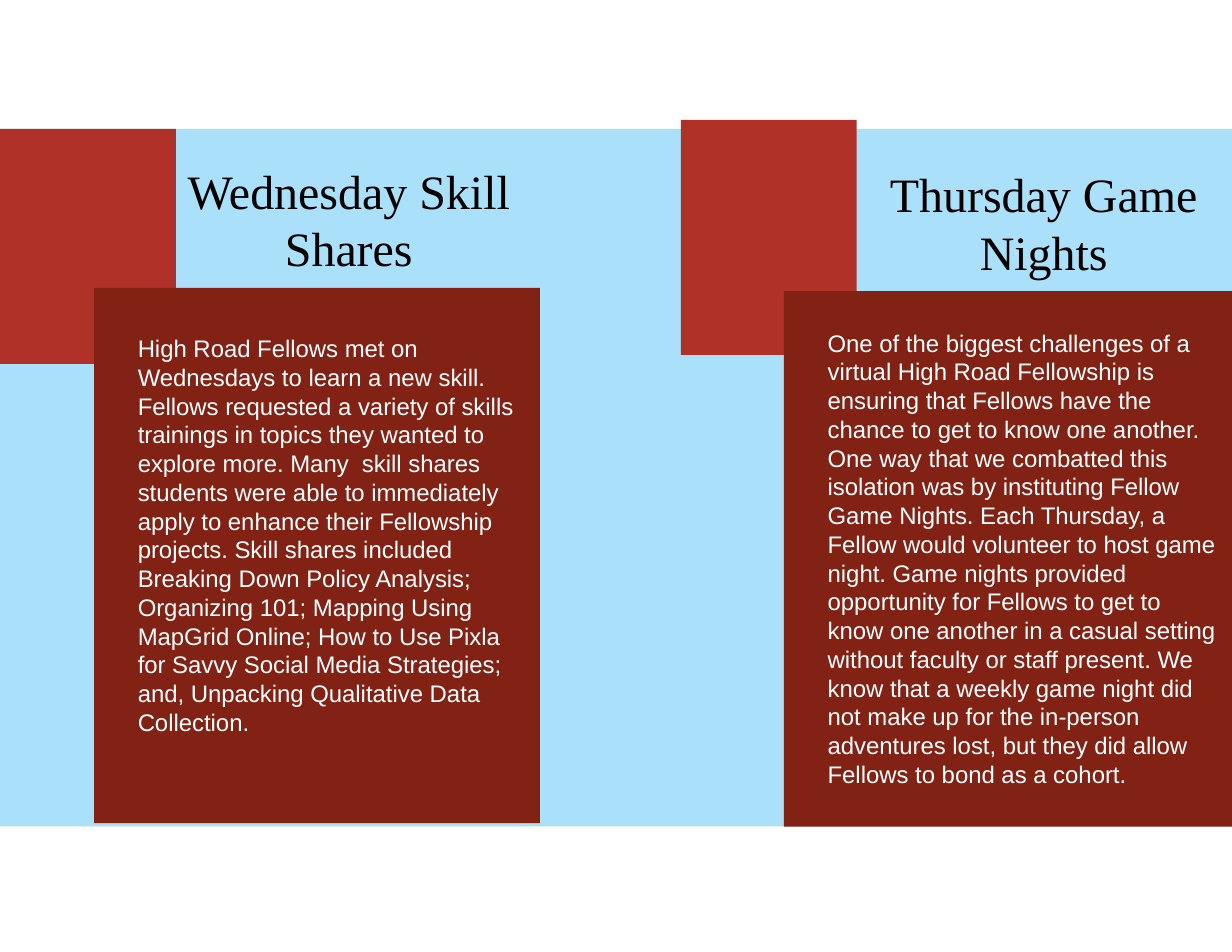
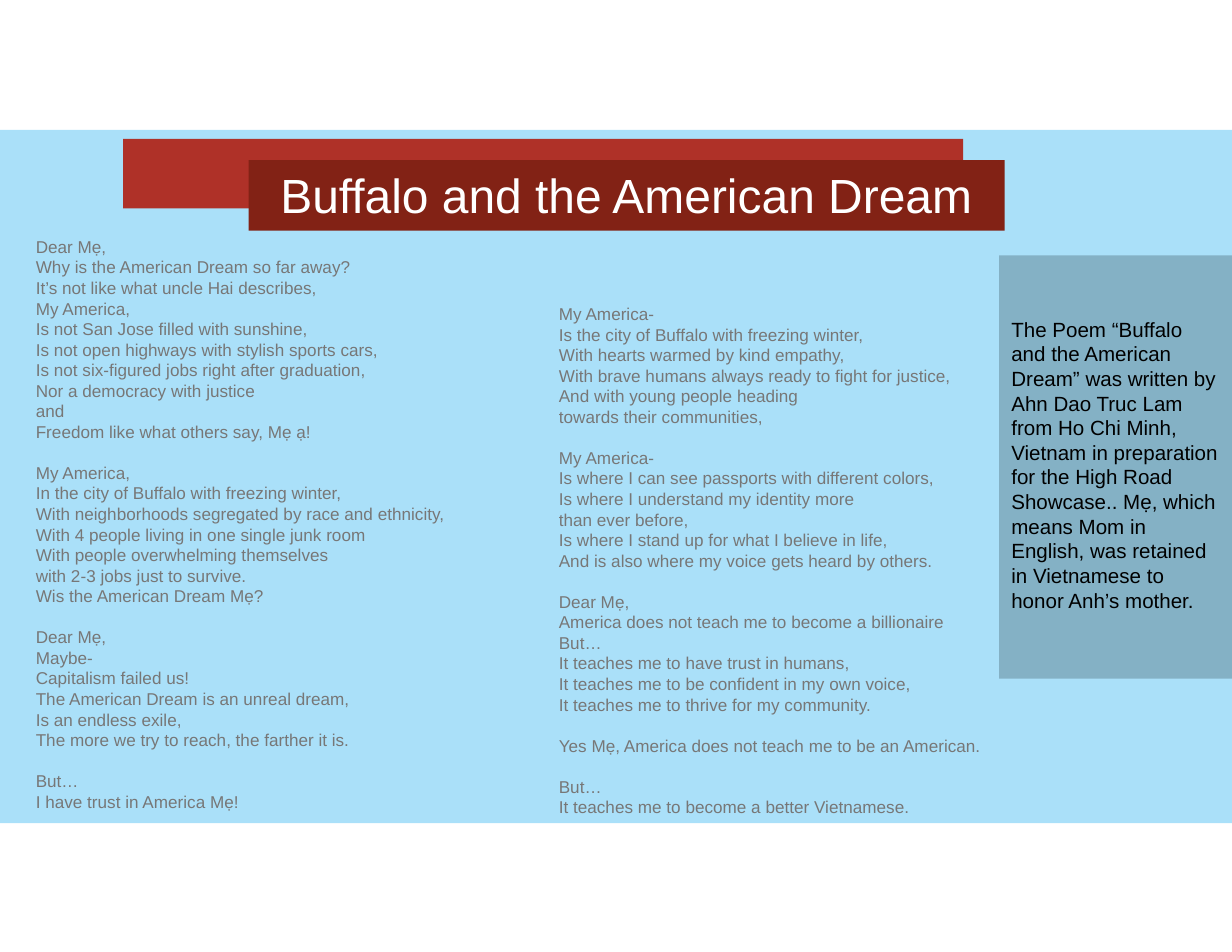
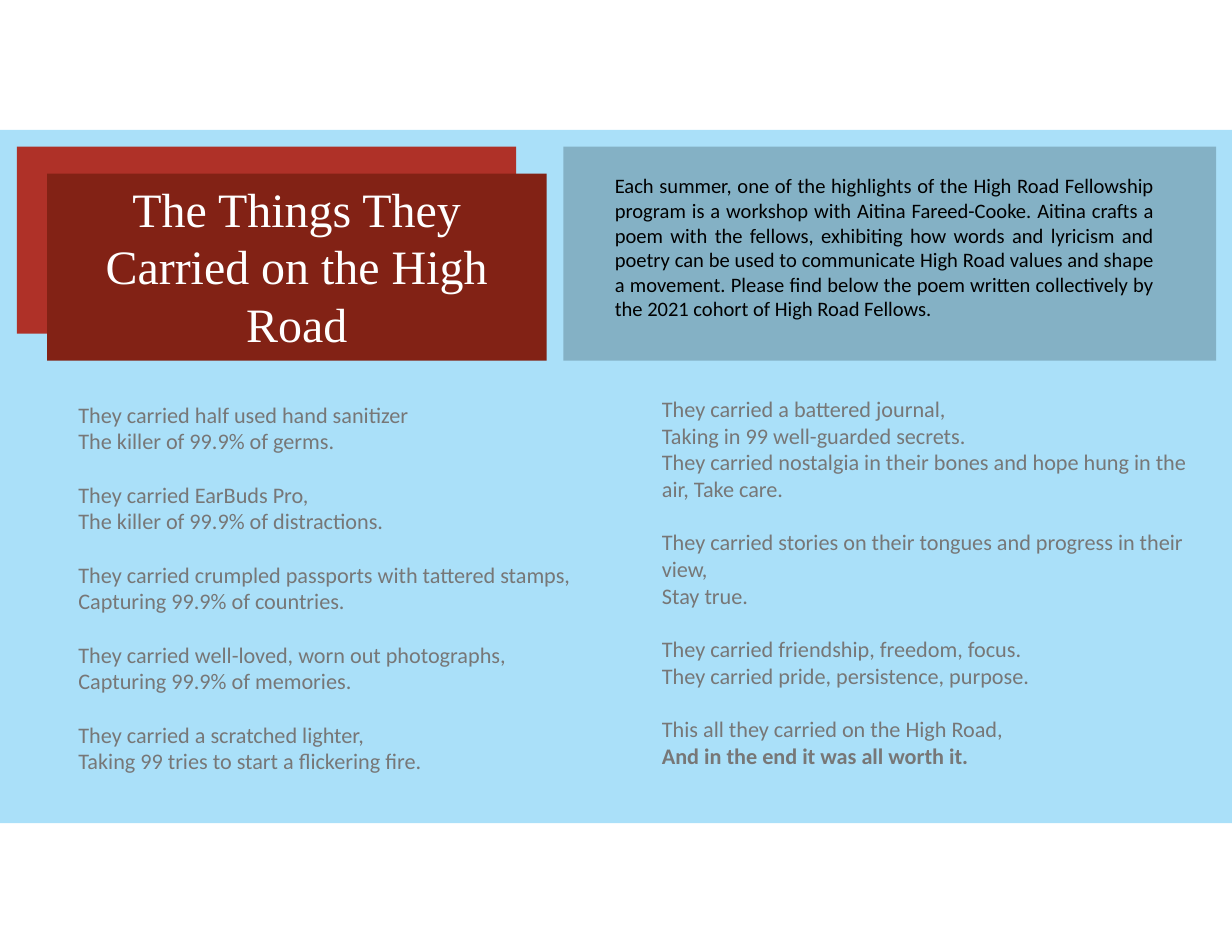
from dataclasses import dataclass, replace

from lxml import etree
from pptx import Presentation
from pptx.dml.color import RGBColor
from pptx.enum.shapes import MSO_SHAPE
from pptx.enum.text import MSO_ANCHOR, MSO_AUTO_SIZE, PP_ALIGN
from pptx.oxml.ns import qn
from pptx.util import Inches, Pt

RECT = MSO_SHAPE.RECTANGLE
LEFT, CENTER, JUSTIFY = PP_ALIGN.LEFT, PP_ALIGN.CENTER, PP_ALIGN.JUSTIFY
TOP, MIDDLE = MSO_ANCHOR.TOP, MSO_ANCHOR.MIDDLE
NO_FIT = MSO_AUTO_SIZE.NONE

SKY, STEEL, RED, MAROON = "AAE0F9", "84B1C5", "AF3128", "822215"
BLACK, WHITE, GRAY = "000000", "FFFFFF", "777777"
SERIF, SANS, HUMANIST = "Times New Roman", "Arial", "Calibri"

COLS, ROWS = 110, 85
TWO_CONTENT = 3
LEADING = 1.2


@dataclass(frozen=True)
class Style:
    size: float
    font: str
    color: str
    align: PP_ALIGN = LEFT
    anchor: MSO_ANCHOR = TOP
    inset: float = 0.05


HEADING = Style(30.8, SERIF, BLACK, CENTER, MIDDLE, 0.11)
BANNER = Style(30.8, SERIF, WHITE, CENTER)
PANEL = Style(15.4, SANS, WHITE)
NOTE = Style(13.2, SANS, BLACK)
POEM = Style(11, SANS, GRAY, JUSTIFY)
CARRIED = Style(14.3, HUMANIST, GRAY, inset=0.11)


def rgb(value):
    return RGBColor.from_string(value)


class Deck:
    """Boxes are (column, row, columns wide, rows high) on the slide grid."""

    def __init__(self):
        self.prs = Presentation()
        self.prs.slide_width, self.prs.slide_height = Inches(11), Inches(8.5)
        self.slide = None

    def grid(self, box):
        col, row = self.prs.slide_width / COLS, self.prs.slide_height / ROWS
        return [round(n * unit) for n, unit in zip(box, (col, row, col, row))]

    def new_slide(self, band_top, band_height):
        layout = self.prs.slide_layouts[TWO_CONTENT]
        self.slide = self.prs.slides.add_slide(layout)
        self.rect((0, band_top, COLS, band_height), SKY)

    def rect(self, box, color):
        sp = self.slide.shapes.add_shape(RECT, *self.grid(box))
        sp.shadow.inherit = False
        sp.fill.solid()
        sp.fill.fore_color.rgb = rgb(color)
        sp.line.fill.background()

    def title(self, box, text, style, fill=None):
        sp = self.place(self.slide.shapes.title, box)
        if fill:
            sp.fill.solid()
            sp.fill.fore_color.rgb = rgb(fill)
        self.set_text(sp, [[text]], style)

    def body(self, idx, box, stanzas, style, bold_last=False):
        sp = self.place(self.slide.placeholders[idx], box)
        self.set_text(sp, stanzas, style, bold_last)

    def text(self, box, text, style):
        sp = self.slide.shapes.add_textbox(*self.grid(box))
        self.set_text(sp, [[text]], style)

    def place(self, sp, box):
        """Move a placeholder to its box, in front of what is drawn so far."""
        sp.left, sp.top, sp.width, sp.height = self.grid(box)
        sp.element.getparent().append(sp.element)
        return sp

    def set_text(self, sp, stanzas, style, bold_last=False):
        """Add one paragraph a line, with a line's space between stanzas."""
        tf = sp.text_frame
        tf.word_wrap = True
        tf.auto_size = NO_FIT
        tf.vertical_anchor = style.anchor
        tf.margin_left = tf.margin_right = Inches(0.11)
        tf.margin_top = tf.margin_bottom = Inches(style.inset)
        leading = Pt(style.size * LEADING)
        p = None
        for i, stanza in enumerate(stanzas):
            for j, line in enumerate(stanza):
                p = tf.paragraphs[0] if p is None else tf.add_paragraph()
                pPr = p._p.get_or_add_pPr()
                pPr.set("marL", "0")
                pPr.set("indent", "0")
                etree.SubElement(pPr, qn("a:buNone"))
                p.alignment = style.align
                p.line_spacing = leading
                p.space_before = leading if i and not j else Pt(0)
                r = p.add_run()
                r.text = line
                r.font.size = Pt(style.size)
                r.font.name = style.font
                r.font.color.rgb = rgb(style.color)
        if bold_last:
            r.font.bold = True


SKILL_SHARES = (
    "High Road Fellows met on Wednesdays to learn a new skill. Fellows "
    "requested a variety of skills trainings in topics they wanted to explore "
    "more. Many  skill shares students were able to immediately apply to "
    "enhance their Fellowship projects. Skill shares included Breaking Down "
    "Policy Analysis; Organizing 101; Mapping Using MapGrid Online; How to Use "
    "Pixla for Savvy Social Media Strategies; and, Unpacking Qualitative Data "
    "Collection."
)
GAME_NIGHTS = (
    "One of the biggest challenges of a virtual High Road Fellowship is "
    "ensuring that Fellows have the chance to get to know one another. One way "
    "that we combatted this isolation was by instituting Fellow Game Nights. "
    "Each Thursday, a Fellow would volunteer to host game night. Game nights "
    "provided opportunity for Fellows to get to know one another in a casual "
    "setting without faculty or staff present. We know that a weekly game "
    "night did not make up for the in-person adventures lost, but they did "
    "allow Fellows to bond as a cohort."
)
DREAM_NOTE = (
    "The Poem “Buffalo and the American Dream” was written by Ahn Dao Truc Lam "
    "from Ho Chi Minh, Vietnam in preparation for the High Road Showcase.. Mẹ, "
    "which means Mom in English, was retained in Vietnamese to honor Anh’s "
    "mother."
)
DREAM_LEFT = [
    ["Dear Mẹ,",
     "Why is the American Dream so far away?",
     "It’s not like what uncle Hai describes,",
     "My America,",
     "Is not San Jose filled with sunshine,",
     "Is not open highways with stylish sports cars,",
     "Is not six-figured jobs right after graduation,",
     "Nor a democracy with justice",
     "and",
     "Freedom like what others say, Mẹ ạ!"],
    ["My America,",
     "In the city of Buffalo with freezing winter,",
     "With neighborhoods segregated by race and ethnicity,",
     "With 4 people living in one single junk room",
     "With people overwhelming themselves",
     "with 2-3 jobs just to survive.",
     "Wis the American Dream Mẹ?"],
    ["Dear Mẹ,",
     "Maybe-",
     "Capitalism failed us!",
     "The American Dream is an unreal dream,",
     "Is an endless exile,",
     "The more we try to reach, the farther it is."],
    ["But…",
     "I have trust in America Mẹ!"],
]
DREAM_RIGHT = [
    ["My America-",
     "Is the city of Buffalo with freezing winter,",
     "With hearts warmed by kind empathy,",
     "With brave humans always ready to fight for justice,",
     "And with young people heading",
     "towards their communities,"],
    ["My America-",
     "Is where I can see passports with different colors,",
     "Is where I understand my identity more",
     "than ever before,",
     "Is where I stand up for what I believe in life,",
     "And is also where my voice gets heard by others."],
    ["Dear Mẹ,",
     "America does not teach me to become a billionaire",
     "But…",
     "It teaches me to have trust in humans,",
     "It teaches me to be confident in my own voice,",
     "It teaches me to thrive for my community."],
    ["Yes Mẹ, America does not teach me to be an American."],
    ["But…",
     "It teaches me to become a better Vietnamese."],
]
CARRIED_INTRO = (
    "Each summer, one of the highlights of the High Road Fellowship program is "
    "a workshop with Aitina Fareed-Cooke. Aitina crafts a poem with the "
    "fellows, exhibiting how words and lyricism and poetry can be used to "
    "communicate High Road values and shape a movement. Please find below the "
    "poem written collectively by the 2021 cohort of High Road Fellows."
)
CARRIED_LEFT = [
    ["They carried half used hand sanitizer",
     "The killer of 99.9% of germs."],
    ["They carried EarBuds Pro,",
     "The killer of 99.9% of distractions."],
    ["They carried crumpled passports with tattered stamps,",
     "Capturing 99.9% of countries."],
    ["They carried well-loved, worn out photographs,",
     "Capturing 99.9% of memories."],
    ["They carried a scratched lighter,",
     "Taking 99 tries to start a flickering fire."],
]
CARRIED_RIGHT = [
    ["They carried a battered journal,",
     "Taking in 99 well-guarded secrets.",
     "They carried nostalgia in their bones and hope hung in the air, Take care."],
    ["They carried stories on their tongues and progress in their view,",
     "Stay true."],
    ["They carried friendship, freedom, focus.",
     "They carried pride, persistence, purpose."],
    ["This all they carried on the High Road,",
     "And in the end it was all worth it."],
]


def weekly_events(deck):
    deck.new_slide(11.5, 62.3)
    deck.rect((0, 11.5, 15.7, 21), RED)
    deck.rect((8.4, 25.7, 39.8, 47.8), MAROON)
    deck.title((13.1, 13.4, 36.1, 12.3), "Wednesday Skill Shares", HEADING)
    deck.rect((60.8, 10.7, 15.7, 21), RED)
    deck.rect((70, 26, 40, 47.8), MAROON)
    deck.text((76.5, 13.7, 33.4, 12.3), "Thursday Game Nights", HEADING)
    deck.body(1, (11.2, 29.3, 37, 37.4), [[SKILL_SHARES]], PANEL)
    deck.body(2, (72.8, 28.8, 37, 42.6), [[GAME_NIGHTS]], PANEL)


def american_dream(deck):
    deck.new_slide(11.6, 61.9)
    deck.body(1, (2.1, 20, 46.7, 53.5), DREAM_LEFT, replace(POEM, inset=0.11))
    deck.rect((89.2, 22.8, 20.8, 37.8), STEEL)
    deck.rect((11, 12.4, 75, 6.2), RED)
    deck.title((22.2, 14.3, 67.5, 6.3), "Buffalo and the American Dream",
               replace(BANNER, font=SANS), MAROON)
    deck.text((89.2, 27.8, 20.8, 27.8), DREAM_NOTE, NOTE)
    deck.body(2, (48.8, 26.6, 40.3, 50), DREAM_RIGHT, POEM)


def things_carried(deck):
    deck.new_slide(11.6, 61.9)
    deck.rect((50.3, 13.1, 58.3, 19.1), STEEL)
    deck.rect((1.5, 13.1, 44.6, 16.7), RED)
    deck.title((4.2, 15.5, 44.6, 16.7),
               "The Things They Carried on the High Road", BANNER, MAROON)
    deck.text((53.8, 15, 50.3, 14.4), CARRIED_INTRO,
              replace(NOTE, font=HUMANIST, align=JUSTIFY))
    deck.body(1, (5.9, 34.7, 50.7, 37.8), CARRIED_LEFT, CARRIED)
    deck.body(2, (58, 34.2, 50.7, 35.9), CARRIED_RIGHT, CARRIED, bold_last=True)


def main():
    deck = Deck()
    weekly_events(deck)
    american_dream(deck)
    things_carried(deck)
    deck.prs.save("out.pptx")


if __name__ == "__main__":
    main()
